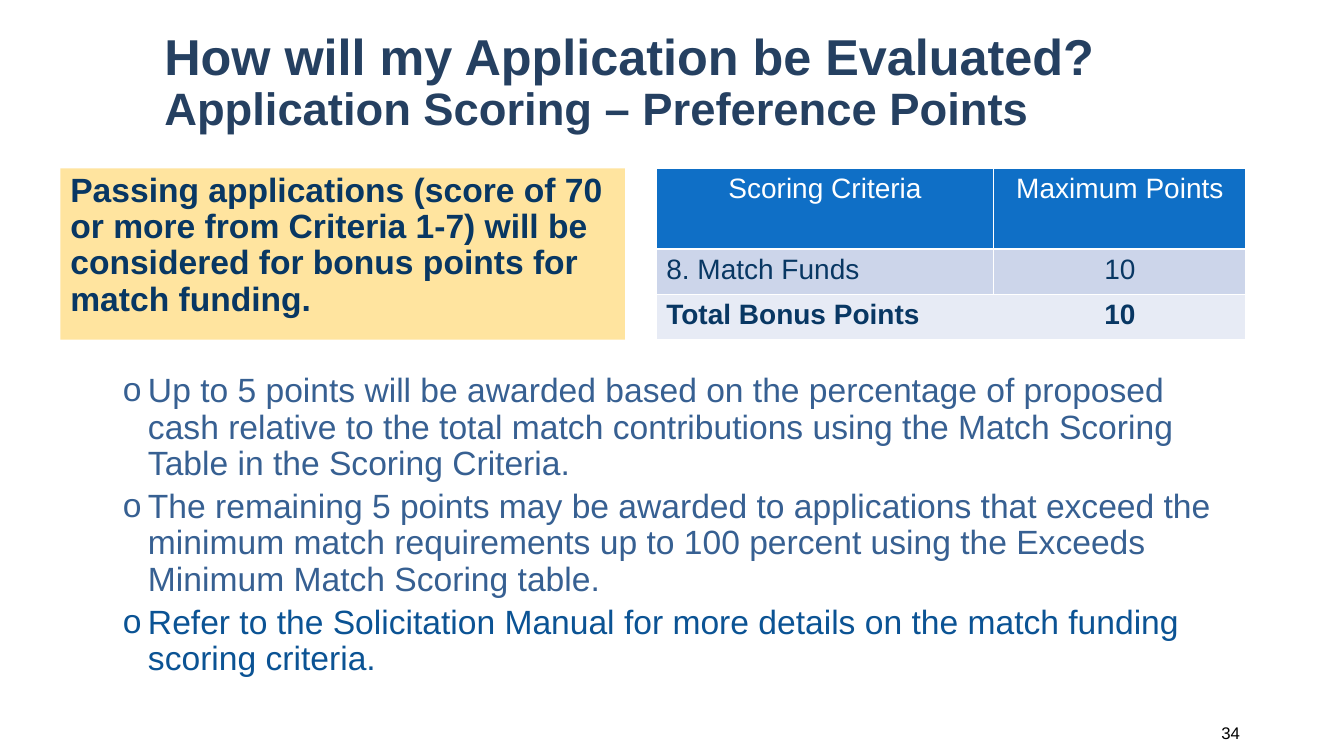
"""Build the slide on preference points for match funding."""
from lxml.etree import SubElement
from pptx import Presentation
from pptx.dml.color import RGBColor
from pptx.enum.shapes import MSO_SHAPE
from pptx.enum.text import MSO_ANCHOR, MSO_AUTO_SIZE, PP_ALIGN
from pptx.oxml.ns import qn
from pptx.util import Inches, Pt

LEFT, MID, RIGHT = PP_ALIGN.LEFT, PP_ALIGN.CENTER, PP_ALIGN.RIGHT
TOP, CENTRE = MSO_ANCHOR.TOP, MSO_ANCHOR.MIDDLE
RECT, FIXED = MSO_SHAPE.RECTANGLE, MSO_AUTO_SIZE.NONE
NAVY = RGBColor(0x25, 0x40, 0x61)
STEEL = RGBColor(0x37, 0x60, 0x92)
BLUE = RGBColor(0x0B, 0x53, 0x94)
INK = RGBColor(0x08, 0x37, 0x63)
SAND = RGBColor(0xFF, 0xE4, 0x9F)
HEAD = RGBColor(0x0F, 0x6F, 0xC6)
BAND = RGBColor(0xCC, 0xD5, 0xEA)
PALE = RGBColor(0xE7, 0xEB, 0xF5)
WHITE = RGBColor(255, 255, 255)
BLACK = RGBColor(0, 0, 0)
GRID = Inches(0.1)


def place(*cells):
    """Turn grid counts into lengths."""
    return [round(GRID * n) for n in cells]


def write(para, text, size, color, bold=False, align=LEFT):
    """Add one styled run to a paragraph."""
    para.alignment = align
    run = para.add_run()
    run.text = text
    look = {"name": "Arial", "size": Pt(size), "bold": bold}
    for key, value in look.items():
        setattr(run.font, key, value)
    run.font.color.rgb = color


deck = Presentation()
deck.slide_width, deck.slide_height = place(133.33, 75)
slide = deck.slides.add_slide(deck.slide_layouts[5])
shapes = slide.shapes

title = shapes.title
page = shapes.add_textbox(*place(104.7, 70.7, 19.3, 4))
body = shapes.add_textbox(*place(6.2, 36.6, 116.6, 32.2))
note = shapes.add_shape(RECT, *place(6, 16.7, 56, 17))
title.left, title.top, title.width, title.height = place(15.3, 2.6, 108.9, 11.4)
for box, anchor in (title, CENTRE), (page, CENTRE), (body, TOP), (note, TOP):
    frame = box.text_frame
    frame.word_wrap = True
    frame.auto_size = FIXED
    frame.vertical_anchor = anchor

para = title.text_frame.paragraphs[0]
para.line_spacing = 0.9
write(para, "How will my Application be Evaluated?", 36, NAVY, True)
para.add_line_break()
SubElement(para._p[-1], qn("a:rPr"), sz="3600")
write(para, "Application Scoring – Preference Points", 32.4, NAVY, True)

write(page.text_frame.paragraphs[0], "34", 12, BLACK, align=RIGHT)

note.shadow.inherit = False
note.fill.solid()
note.fill.fore_color.rgb = SAND
note.line.fill.background()
para = note.text_frame.paragraphs[0]
para.line_spacing = 0.9
write(para, "Passing applications (score of 70 or more from Criteria 1-7) "
      "will be considered for bonus points for match funding.", 24, INK, True)

points = [
    ("Up to 5 points will be awarded based on the percentage of proposed cash "
     "relative to the total match contributions using the Match Scoring Table "
     "in the Scoring Criteria.", STEEL),
    ("The remaining 5 points may be awarded to applications that exceed the "
     "minimum match requirements up to 100 percent using the Exceeds Minimum "
     "Match Scoring table.", STEEL),
    ("Refer to the Solicitation Manual for more details on the match funding "
     "scoring criteria.", BLUE),
]
frame = body.text_frame
for i, (text, color) in enumerate(points):
    para = frame.add_paragraph() if i else frame.paragraphs[0]
    para.level = 1
    para.line_spacing = 0.9
    para.space_before = Pt(5 if i else 0)
    props = para._p.get_or_add_pPr()
    props.set("marL", str(Inches(0.75)))
    props.set("indent", str(-Inches(0.25)))
    SubElement(props, qn("a:buFont"), typeface="Arial")
    SubElement(props, qn("a:buChar"), char="o")
    write(para, text, 24, color)

rows = [
    ("Scoring Criteria", "Maximum Points", HEAD, WHITE, False, 8),
    ("8. Match Funds", "10", BAND, INK, False, 4.5),
    ("Total Bonus Points", "10", PALE, INK, True, 4.5),
]
table = shapes.add_table(3, 2, *place(65.1, 16.7, 58.5, 17)).table
table.columns[0].width, table.columns[1].width = place(33.5, 25)
for r, (name, score, fill, color, bold, high) in enumerate(rows):
    table.rows[r].height = place(high)[0]
    for c, text in enumerate((name, score)):
        cell = table.cell(r, c)
        props = cell._tc.get_or_add_tcPr()
        for side in "LRTB":
            edge = SubElement(props, qn(f"a:ln{side}"), w=str(Pt(1)))
            if r == 2 and side == "RL"[c]:
                SubElement(edge, qn("a:noFill"))
            else:
                paint = SubElement(edge, qn("a:solidFill"))
                SubElement(paint, qn("a:srgbClr"), val=str(WHITE))
        cell.fill.solid()
        cell.fill.fore_color.rgb = fill
        align = MID if r == 0 or c else LEFT
        write(cell.text_frame.paragraphs[0], text, 20, color, bold, align)

deck.save("out.pptx")
